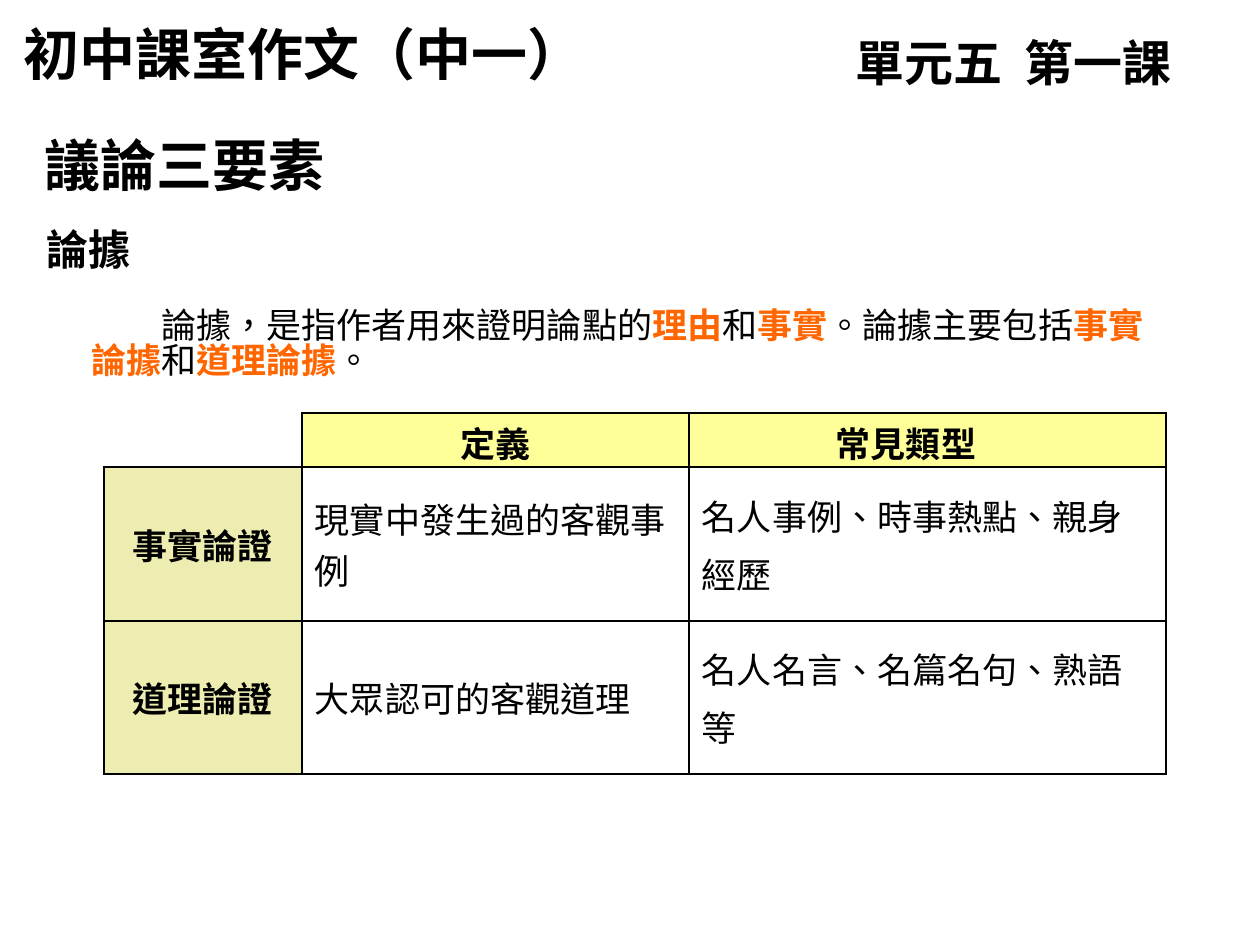
from dataclasses import dataclass

from lxml import etree
from pptx import Presentation
from pptx import util as u
from pptx.dml.color import RGBColor
from pptx.enum import lang, text
from pptx.oxml.ns import qn

PX = 914400 // 126
HUES = {"ink": "000000", "key": "FF6600", "head": "FFFF99", "side": "EDEDB1"}


@dataclass
class Label:
    box: tuple[int, int, int, int]
    runs: list[str]  # every second run is a key word
    size: int
    font: str = "Arial"
    bold: bool = True
    indent: int = 0
    pitch: float = 1.0


@dataclass
class Entry:
    row: int
    col: int
    lines: list[str]
    fill: str = ""
    left: int = 13
    center: bool = False


LABELS = [
    Label((34, 213, 471, 72), ["論據"], 24),
    Label((843, 26, 422, 72), ["單元五  第一課"], 28, "Roboto"),
    Label((11, 14, 658, 79), ["初中課室作文（中一）"], 32, "Roboto"),
    Label((32, 125, 480, 79), ["議論三要素"], 32),
    Label((79, 297, 1101, 97),
          ["論據，是指作者用來證明論點的", "理由", "和", "事實", "。論據主要包括",
           "事實論據", "和", "道理論據", "。"],
          20, bold=False, indent=70, pitch=0.83),
]

COLS = [198, 387, 477]
ROWS = [54, 154, 153]
ENTRIES = [
    Entry(0, 1, ["定義"], "head", center=True),
    Entry(0, 2, ["常見類型"], "head", left=147),
    Entry(1, 0, ["事實論證"], "side", center=True),
    Entry(1, 1, ["現實中發生過的客觀事例"]),
    Entry(1, 2, ["名人事例、時事熱點、親身", "經歷"]),
    Entry(2, 0, ["道理論證"], "side", center=True),
    Entry(2, 1, ["大眾認可的客觀道理"]),
    Entry(2, 2, ["名人名言、名篇名句、熟語", "等"]),
]


def style(run, size: int, font: str, bold: bool, hue: str = "ink") -> None:
    run.font.size = u.Pt(size)
    run.font.name = font
    run.font.bold = bold
    run.font.color.rgb = RGBColor.from_string(HUES[hue])
    run.font.language_id = lang.MSO_LANGUAGE_ID.TRADITIONAL_CHINESE


def write(slide, label: Label) -> None:
    box = slide.shapes.add_textbox(*(n * PX for n in label.box))
    frame = box.text_frame
    frame.word_wrap = True
    frame.vertical_anchor = text.MSO_ANCHOR.MIDDLE
    para = frame.paragraphs[0]
    para.line_spacing = label.pitch
    if label.indent:
        para._p.get_or_add_pPr().set("indent", str(label.indent * PX))
    for i, words in enumerate(label.runs):
        run = para.add_run()
        run.text = words
        key = i % 2 == 1
        style(run, label.size, label.font, label.bold or key, "key" if key else "ink")


def edge(cell, sides: str) -> None:
    props = cell._tc.get_or_add_tcPr()
    for side in "LRTB":
        line = etree.SubElement(props, qn(f"a:ln{side}"), w="12700")
        if side in sides:
            fill = etree.SubElement(line, qn("a:solidFill"))
            etree.SubElement(fill, qn("a:srgbClr"), val=HUES["ink"])
        else:
            etree.SubElement(line, qn("a:noFill"))


def enter(grid, entry: Entry) -> None:
    cell = grid.cell(entry.row, entry.col)
    cell.text_frame.text = "\n".join(entry.lines)
    cell.margin_left = entry.left * PX
    if entry.fill:
        cell.fill.solid()
        cell.fill.fore_color.rgb = RGBColor.from_string(HUES[entry.fill])
    bold = bool(entry.fill)
    for i, para in enumerate(cell.text_frame.paragraphs):
        if entry.center:
            para.alignment = text.PP_ALIGN.CENTER
        if i:
            para.space_before = u.Pt(4)
        style(para.runs[0], 20, "Arial", bold)


def tabulate(slide) -> None:
    frame = slide.shapes.add_table(len(ROWS), len(COLS), 104 * PX, 413 * PX,
                                   sum(COLS) * PX, sum(ROWS) * PX)
    grid = frame.table
    grid.first_row = grid.horz_banding = False
    for col, wide in zip(grid.columns, COLS):
        col.width = wide * PX
    for row, high in zip(grid.rows, ROWS):
        row.height = high * PX
    for r in range(len(ROWS)):
        for c in range(len(COLS)):
            cell = grid.cell(r, c)
            cell.vertical_anchor = text.MSO_ANCHOR.MIDDLE
            cell.margin_left = cell.margin_right = 13 * PX
            # The header row is low, so its text sits on the lower edge
            cell.margin_top = (6 if r else 4) * PX
            cell.margin_bottom = (6 if r else 0) * PX
            edge(cell, "LRTB" if r or c else "RB")
            cell.fill.background()
    for entry in ENTRIES:
        enter(grid, entry)


def main() -> None:
    deck = Presentation()
    deck.slide_width, deck.slide_height = 1260 * PX, 945 * PX
    slide = deck.slides.add_slide(deck.slide_layouts[6])
    # Headings and definition
    for label in LABELS:
        write(slide, label)
    # Kinds of evidence
    tabulate(slide)
    deck.save("out.pptx")


if __name__ == "__main__":
    main()
